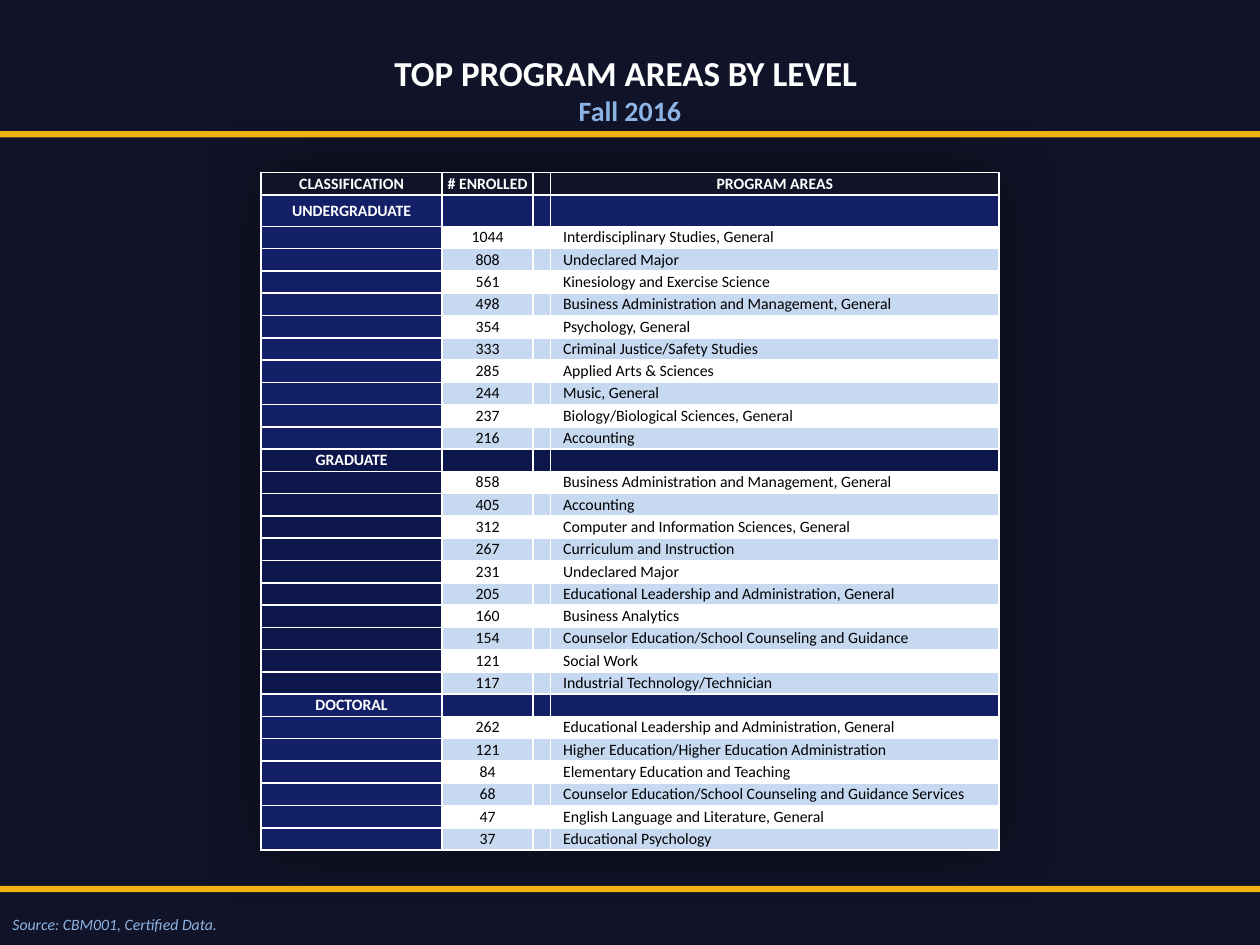
from dataclasses import dataclass

from lxml.etree import SubElement
from pptx import Presentation
from pptx.dml.color import RGBColor
from pptx.enum.shapes import MSO_SHAPE
from pptx.enum.text import MSO_ANCHOR, PP_ALIGN
from pptx.oxml import parse_xml
from pptx.oxml.ns import nsdecls, qn
from pptx.util import Inches, Pt

FONT = "Calibri"
NIGHT, NAVY, DEEP_NAVY = "111428", "132067", "0D164A"
WHITE, BLACK, PALE_BLUE, SKY, GOLD = "FFFFFF", "000000", "C6D9F1", "8EB4E3", "EEB211"
TABLE_LEFT, TABLE_TOP, TABLE_HEIGHT = 2.07, 1.37, 5.38
COLUMN_WIDTHS = (1.44, 0.72, 0.14, 3.56)
FIRST_LEVEL_HEIGHT = 0.25
HEADINGS = ("CLASSIFICATION", "# ENROLLED", "", "PROGRAM AREAS")


@dataclass
class Level:
    name: str
    color: str
    programs: list[tuple[int, str]]


LEVELS = [
    Level("UNDERGRADUATE", NAVY, [
        (1044, "Interdisciplinary Studies, General"),
        (808, "Undeclared Major"),
        (561, "Kinesiology and Exercise Science"),
        (498, "Business Administration and Management, General"),
        (354, "Psychology, General"),
        (333, "Criminal Justice/Safety Studies"),
        (285, "Applied Arts & Sciences"),
        (244, "Music, General"),
        (237, "Biology/Biological Sciences, General"),
        (216, "Accounting"),
    ]),
    Level("GRADUATE", DEEP_NAVY, [
        (858, "Business Administration and Management, General"),
        (405, "Accounting"),
        (312, "Computer and Information Sciences, General"),
        (267, "Curriculum and Instruction"),
        (231, "Undeclared Major"),
        (205, "Educational Leadership and Administration, General"),
        (160, "Business Analytics"),
        (154, "Counselor Education/School Counseling and Guidance"),
        (121, "Social Work"),
        (117, "Industrial Technology/Technician"),
    ]),
    Level("DOCTORAL", NAVY, [
        (262, "Educational Leadership and Administration, General"),
        (121, "Higher Education/Higher Education Administration"),
        (84, "Elementary Education and Teaching"),
        (68, "Counselor Education/School Counseling and Guidance Services"),
        (47, "English Language and Literature, General"),
        (37, "Educational Psychology"),
    ]),
]


def paint(color_holder, color: str) -> None:
    """Apply a hex colour to a fill or a font."""
    if hasattr(color_holder, "solid"):
        color_holder.solid()
        color_holder.fore_color.rgb = RGBColor.from_string(color)
    else:
        color_holder.color.rgb = RGBColor.from_string(color)


def add_text_box(slide, left: float, top: float, width: float, height: float):
    frame = slide.shapes.add_textbox(
        Inches(left), Inches(top), Inches(width), Inches(height)).text_frame
    frame.word_wrap = True
    paragraph = frame.paragraphs[0]
    paragraph.font.name = FONT
    return paragraph


def add_rule(slide, top: float) -> None:
    rule = slide.shapes.add_shape(
        MSO_SHAPE.RECTANGLE, 0, Inches(top), Inches(10), Inches(0.05))
    rule.shadow.inherit = False
    paint(rule.fill, GOLD)
    rule.line.fill.background()


def fill_cell(cell, text: str, fill: str, color: str = WHITE, bold: bool = True,
              indented: bool = False) -> None:
    paint(cell.fill, fill)
    cell.margin_left = cell.margin_right = cell.margin_top = cell.margin_bottom = 0
    cell.vertical_anchor = MSO_ANCHOR.MIDDLE
    paragraph = cell.text_frame.paragraphs[0]
    if not text:
        # The end mark keeps an empty cell as low as its row
        SubElement(paragraph._p, qn("a:endParaRPr"), sz="900")
        return
    paragraph.text = text
    paragraph.font.name, paragraph.font.size = FONT, Pt(9)
    paragraph.font.bold = bold
    paint(paragraph.font, color)
    if indented:
        paragraph._p.get_or_add_pPr().set("marL", str(Inches(0.1)))
    else:
        paragraph.alignment = PP_ALIGN.CENTER


def add_program_table(slide) -> None:
    row_count = 1 + sum(1 + len(level.programs) for level in LEVELS)
    table = slide.shapes.add_table(
        row_count, len(COLUMN_WIDTHS), Inches(TABLE_LEFT), Inches(TABLE_TOP),
        Inches(sum(COLUMN_WIDTHS)), Inches(TABLE_HEIGHT)).table
    table.first_row = table.horz_banding = False
    table._tbl.tblPr.insert(0, parse_xml(
        f'<a:effectLst {nsdecls("a")}><a:outerShdw blurRad="{Inches(0.5)}" algn="ctr">'
        '<a:srgbClr val="000000"><a:alpha val="50000"/></a:srgbClr>'
        '</a:outerShdw></a:effectLst>'))
    for column, width in zip(table.columns, COLUMN_WIDTHS):
        column.width = Inches(width)
    for row in table.rows:
        row.height = Inches((TABLE_HEIGHT - FIRST_LEVEL_HEIGHT) / (row_count - 1))
    table.rows[1].height = Inches(FIRST_LEVEL_HEIGHT)

    rows = iter(table.rows)
    for cell, heading in zip(next(rows).cells, HEADINGS):
        fill_cell(cell, heading, NIGHT)
    for level in LEVELS:
        for cell, text in zip(next(rows).cells, (level.name, "", "", "")):
            fill_cell(cell, text, level.color)
        for index, (enrolled, program) in enumerate(level.programs):
            band = PALE_BLUE if index % 2 else WHITE
            side, number, gap, area = next(rows).cells
            fill_cell(side, "", level.color)
            fill_cell(number, str(enrolled), band, BLACK, False)
            fill_cell(gap, "", band)
            fill_cell(area, program, band, BLACK, False, indented=True)


def main() -> None:
    presentation = Presentation()
    presentation.slide_width, presentation.slide_height = Inches(10), Inches(7.5)
    slide = presentation.slides.add_slide(presentation.slide_layouts[6])
    paint(slide.background.fill, NIGHT)

    # Title and term
    title = add_text_box(slide, 0, 0.36, 10, 1.01)
    title.alignment = PP_ALIGN.CENTER
    title.font.bold = True
    for text, size, color in (("TOP PROGRAM AREAS BY LEVEL ", 20, WHITE),
                              ("Fall 2016", 16, SKY)):
        if title.runs:
            title.add_line_break()
        run = title.add_run()
        run.text, run.font.size = text, Pt(size)
        paint(run.font, color)

    # Enrollment table
    add_program_table(slide)

    # Source note
    source = add_text_box(slide, 0, 7.21, 1.91, 0.25)
    source.text = "Source: CBM001, Certified Data."
    source.font.size, source.font.italic = Pt(9), True
    paint(source.font, SKY)

    # Gold rules
    for top in (1.04, 7.03):
        add_rule(slide, top)

    presentation.save("out.pptx")


if __name__ == "__main__":
    main()
